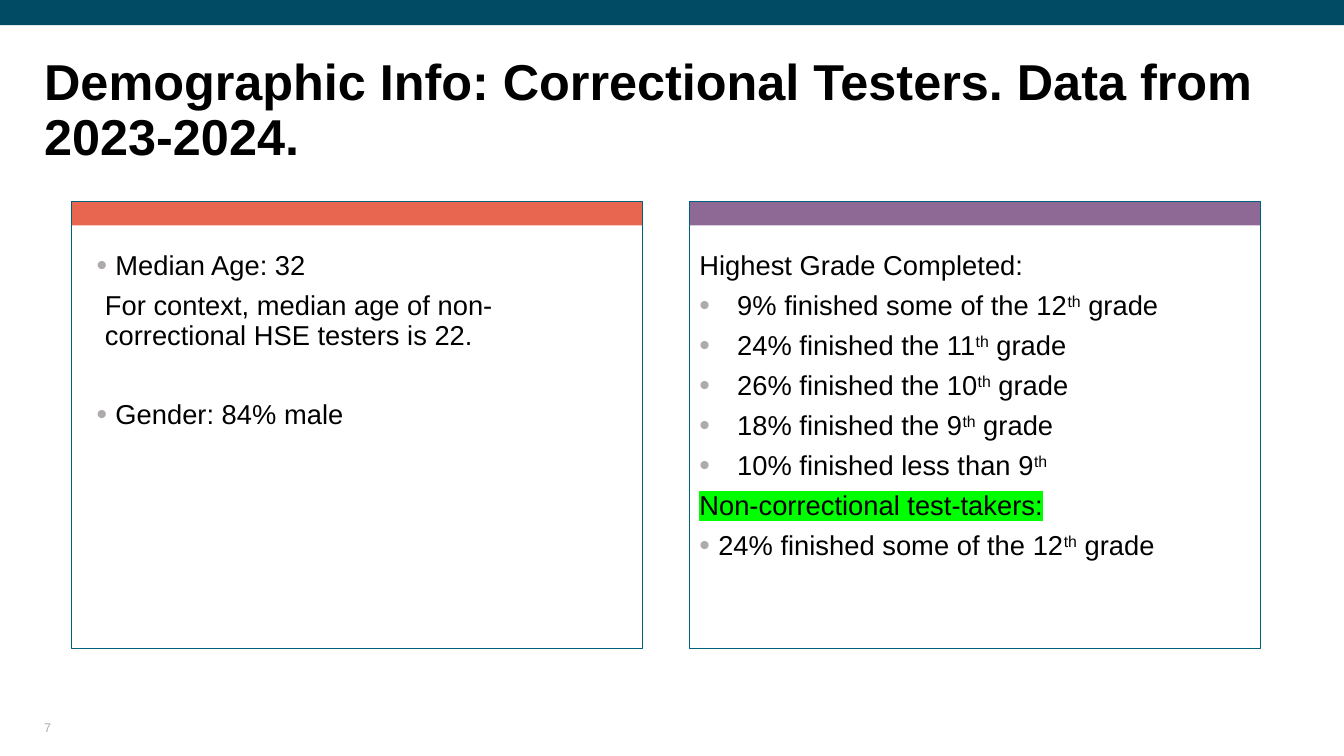
from lxml import etree
from pptx import Presentation
from pptx import util as u
from pptx.dml.color import RGBColor
from pptx.enum import shapes, text
from pptx.oxml import ns

TEAL = RGBColor(0x01, 0x4B, 0x64)
OUTLINE = RGBColor(0x00, 0x61, 0x7D)
CORAL = RGBColor(0xE8, 0x66, 0x50)
PURPLE = RGBColor(0x8E, 0x69, 0x96)
GRAY = RGBColor(0xAF, 0xAB, 0xAB)
BLACK = RGBColor(0, 0, 0)
GREEN = RGBColor(0, 0xFF, 0)

PANEL_TOP, PANEL_WIDTH, PANEL_HEIGHT = 144, 408.25, 319
BAR_HEIGHT = 17
SPACE, WIDE_SPACE = 7.5, 36

# Panels: left, bar colour, side inset, paragraphs
# Paragraph: text (^ marks superscript), indent, bulleted, space before, highlighted
PANELS = [
    (51, CORAL, 18, [
        ("Median Age: 32", 13.5, True, 0, False),
        ("For context, median age of non-correctional HSE testers is 22.", 6, False, SPACE, False),
        ("Gender: 84% male", 13.5, True, WIDE_SPACE, False),
    ]),
    (492.5, PURPLE, 7.2, [
        ("Highest Grade Completed:", 0, False, 0, False),
        ("9% finished some of the 12^th^ grade", 27, True, SPACE, False),
        ("24% finished the 11^th^ grade", 27, True, SPACE, False),
        ("26% finished the 10^th^ grade", 27, True, SPACE, False),
        ("18% finished the 9^th^ grade", 27, True, SPACE, False),
        ("10% finished less than 9^th", 27, True, SPACE, False),
        ("Non-correctional test-takers:", 0, False, SPACE, True),
        ("24% finished some of the 12^th^ grade", 13.5, True, SPACE, False),
    ]),
]


def add_rectangle(left, top, width, height, fill=None):
    shape = slide.shapes.add_shape(shapes.MSO_SHAPE.RECTANGLE, u.Pt(left), u.Pt(top),
                                   u.Pt(width), u.Pt(height))
    shape.shadow.inherit = False
    if fill is None:
        shape.fill.background()
        shape.line.color.rgb = OUTLINE
        shape.line.width = u.Pt(0.75)
    else:
        shape.fill.solid()
        shape.fill.fore_color.rgb = fill
        shape.line.fill.background()
    return shape


def format_font(font, size, color, bold=False):
    font.name = "Arial"
    font.size = u.Pt(size)
    font.color.rgb = color
    font.bold = bold


presentation = Presentation()
presentation.slide_width = u.Pt(960)
presentation.slide_height = u.Pt(540)
slide = presentation.slides.add_slide(presentation.slide_layouts[5])

# Top band
add_rectangle(0, 0, 960, 18, TEAL)

# Title
title = slide.shapes.title
title.left, title.top, title.width, title.height = u.Pt(31.5), u.Pt(41), u.Pt(887), u.Pt(91.5)
frame = title.text_frame
frame.text = "Demographic Info: Correctional Testers. Data from 2023-2024."
frame.word_wrap = True
frame.auto_size = text.MSO_AUTO_SIZE.NONE
frame.vertical_anchor = text.MSO_ANCHOR.TOP
frame.margin_left = frame.margin_top = frame.margin_right = frame.margin_bottom = 0
paragraph = frame.paragraphs[0]
paragraph.alignment = text.PP_ALIGN.LEFT
paragraph.line_spacing = 0.9
format_font(paragraph.runs[0].font, 36, BLACK, True)

# Two panels with coloured bars
for left, bar_color, inset, lines in PANELS:
    add_rectangle(left, PANEL_TOP, PANEL_WIDTH, BAR_HEIGHT, bar_color)
    panel = add_rectangle(left, PANEL_TOP, PANEL_WIDTH, PANEL_HEIGHT)
    frame = panel.text_frame
    frame.word_wrap = True
    frame.vertical_anchor = text.MSO_ANCHOR.TOP
    frame.margin_left = frame.margin_right = u.Pt(inset)
    frame.margin_top, frame.margin_bottom = u.Pt(36), u.Pt(3.6)
    for index, (line, indent, bulleted, space, highlighted) in enumerate(lines):
        paragraph = frame.add_paragraph() if index else frame.paragraphs[0]
        properties = paragraph._p.get_or_add_pPr()
        properties.set("marL", str(u.Pt(indent)))
        properties.set("indent", str(u.Pt(-indent if bulleted else 0)))
        if bulleted:
            color = etree.SubElement(properties, ns.qn("a:buClr"))
            etree.SubElement(color, ns.qn("a:srgbClr"), val=str(GRAY))
            etree.SubElement(properties, ns.qn("a:buSzPct"), val="110000")
            etree.SubElement(properties, ns.qn("a:buFont"), typeface="Arial")
            etree.SubElement(properties, ns.qn("a:buChar"), char="•")
        paragraph.alignment = text.PP_ALIGN.LEFT
        paragraph.line_spacing = 0.9
        paragraph.space_before = u.Pt(space)
        for part, words in enumerate(line.split("^")):
            run = paragraph.add_run()
            run.text = words
            format_font(run.font, 19.5, BLACK)
            run_properties = run._r.get_or_add_rPr()
            if part % 2:
                run_properties.set("baseline", "30000")
            if highlighted:
                highlight = etree.Element(ns.qn("a:highlight"))
                etree.SubElement(highlight, ns.qn("a:srgbClr"), val=str(GREEN))
                run_properties.find(ns.qn("a:solidFill")).addnext(highlight)

# Slide number
number = slide.shapes.add_textbox(u.Pt(31.5), u.Pt(507.5), u.Pt(216), u.Pt(17.5))
frame = number.text_frame
frame.text = "7"
frame.word_wrap = True
frame.vertical_anchor = text.MSO_ANCHOR.BOTTOM
frame.margin_left = frame.margin_top = frame.margin_right = frame.margin_bottom = 0
format_font(frame.paragraphs[0].runs[0].font, 9, GRAY)

presentation.save("out.pptx")
